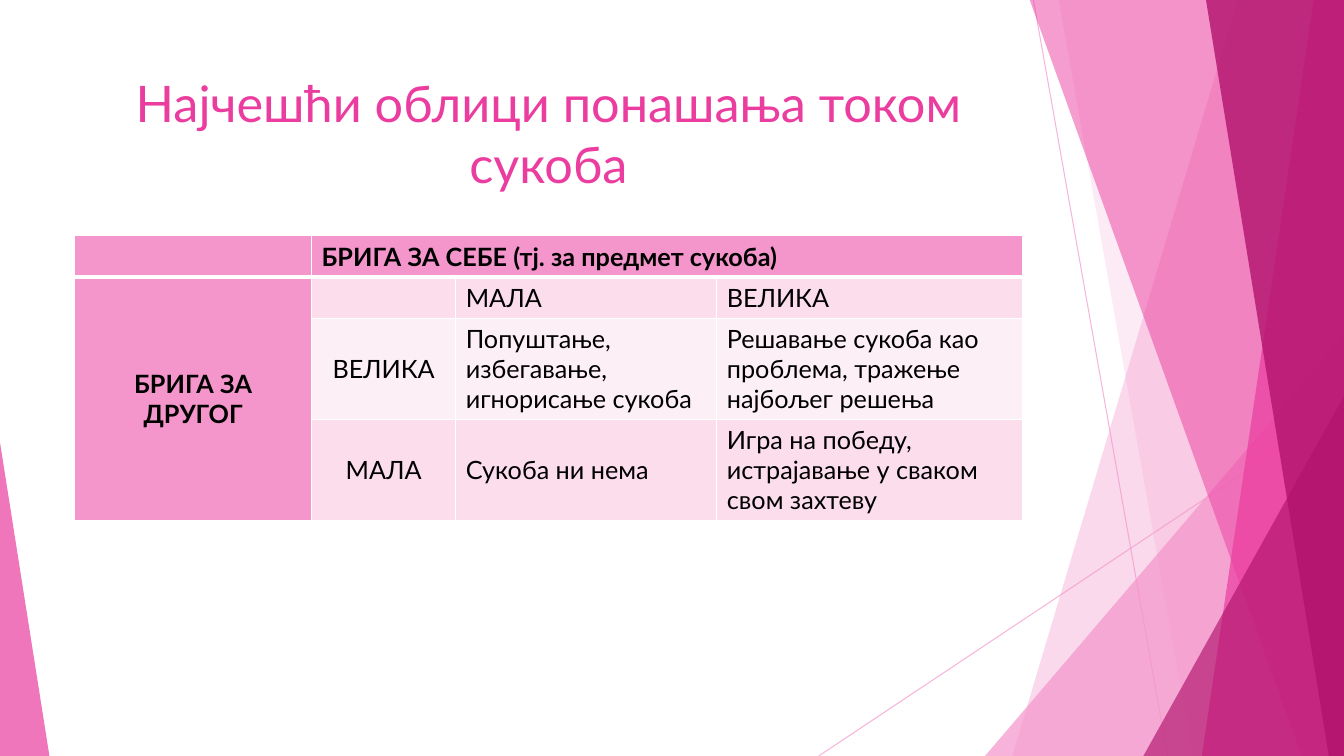
from lxml import etree
from pptx import Presentation
from pptx.dml.color import RGBColor
from pptx.enum.shapes import MSO_CONNECTOR, MSO_SHAPE
from pptx.enum.text import MSO_ANCHOR, PP_ALIGN
from pptx.oxml.ns import qn
from pptx.util import Inches, Pt

STRAIGHT = MSO_CONNECTOR.STRAIGHT
TRIANGLE = MSO_SHAPE.ISOSCELES_TRIANGLE
LEFT, CENTER = PP_ALIGN.LEFT, PP_ALIGN.CENTER
TOP, MIDDLE = MSO_ANCHOR.TOP, MSO_ANCHOR.MIDDLE

COLORS = {
    "light": "F496CB",
    "pink": "EB3D9F",
    "dark": "B2136D",
    "band": "FBDDEC",
    "pale": "FDEFF6",
    "black": "000000",
    "white": "FFFFFF",
}
RIGHT, BOTTOM = 13.33, 7.5


def rgb(name):
    return RGBColor.from_string(COLORS[name])


def write(tf, text, size=18, color="black", bold=False, align=LEFT, font="Lato"):
    p = tf.paragraphs[0]
    p.alignment = align
    r = p.add_run()
    r.text = text
    r.font.name = font
    r.font.size = Pt(size)
    r.font.bold = bold
    r.font.color.rgb = rgb(color)


def set_alpha(parent, percent):
    clr = next(parent.iter(qn("a:srgbClr")))
    etree.SubElement(clr, qn("a:alpha")).set("val", str(percent * 1000))


class SlideBuilder:
    def __init__(self, slide):
        self.s = slide

    def paint(self, sp, color, alpha):
        sp.shadow.inherit = False
        sp.line.fill.background()
        sp.fill.solid()
        sp.fill.fore_color.rgb = rgb(color)
        set_alpha(sp._element.spPr, alpha)

    def line(self, x1, y1, x2, y2, color="light", width=0.75, alpha=70):
        sp = self.s.shapes.add_connector(
            STRAIGHT, Inches(x1), Inches(y1), Inches(x2), Inches(y2))
        sp.line.color.rgb = rgb(color)
        sp.line.width = Pt(width)
        set_alpha(sp._element.spPr, alpha)
        etree.SubElement(sp._element.spPr, qn("a:effectLst"))

    def shard(self, top_x, bottom_x, color, alpha):
        top = -0.01
        corners = [(RIGHT, top), (RIGHT, BOTTOM), (bottom_x, BOTTOM)]
        fb = self.s.shapes.build_freeform(Inches(top_x), Inches(top))
        fb.add_line_segments([(Inches(x), Inches(y)) for x, y in corners])
        self.paint(fb.convert_to_shape(), color, alpha)

    def triangle(self, x, y, w, apex, color, alpha):
        sp = self.s.shapes.add_shape(
            TRIANGLE, Inches(x), Inches(y), Inches(w), Inches(BOTTOM - y))
        sp.adjustments[0] = apex
        self.paint(sp, color, alpha)

    def text(self, x, y, w, h, text, **fmt):
        tf = self.s.shapes.add_textbox(
            Inches(x), Inches(y), Inches(w), Inches(h)).text_frame
        tf.word_wrap = True
        tf.vertical_anchor = TOP
        write(tf, text, **fmt)

    def border(self, cell, bottom):
        tcPr = cell._tc.get_or_add_tcPr()
        widths = {"lnL": 1, "lnR": 1, "lnT": 1, "lnB": bottom}
        for i, (side, width) in enumerate(widths.items()):
            ln = etree.Element(qn(f"a:{side}"), w=str(Pt(width)))
            fill = etree.SubElement(ln, qn("a:solidFill"))
            etree.SubElement(fill, qn("a:srgbClr"), val=COLORS["white"])
            tcPr.insert(i, ln)

    def table(self, x, y, widths, heights, rows, fills, merges):
        t = self.s.shapes.add_table(
            len(heights), len(widths), Inches(x), Inches(y),
            Inches(sum(widths)), Inches(sum(heights))).table
        t.first_row = t.horz_banding = False
        for col, w in zip(t.columns, widths):
            col.width = Inches(w)
        for row, h in zip(t.rows, heights):
            row.height = Inches(h)
        for i, row in enumerate(rows):
            for j, text in enumerate(row):
                cell = t.cell(i, j)
                header = i == 0 or j == 0
                cell.fill.solid()
                cell.fill.fore_color.rgb = rgb("light" if header else fills[i])
                cell.vertical_anchor = MIDDLE
                self.border(cell, 3 if i == 0 else 1)
                if text:
                    write(cell.text_frame, text, bold=header,
                          align=CENTER if i and j < 2 else LEFT)
        for first, last in merges:
            t.cell(*first).merge(t.cell(*last))


def main():
    prs = Presentation()
    prs.slide_width, prs.slide_height = Inches(RIGHT), Inches(BOTTOM)
    b = SlideBuilder(prs.slides.add_slide(prs.slide_layouts[6]))

    b.line(10.25, 0, 11.58, BOTTOM)
    b.line(RIGHT, 4.03, 8.12, BOTTOM)
    b.shard(12.28, 10.04, "light", 36)
    b.shard(10.5, 11.83, "light", 20)
    b.triangle(9.77, 3.33, 3.56, 1, "light", 72)
    b.shard(10.21, 12.91, "pink", 50)
    b.shard(13.03, 11.92, "pink", 70)
    b.shard(11.96, 13.18, "dark", 80)
    b.triangle(11.34, 3.93, 1.99, 1, "dark", 66)
    b.triangle(0, 4.39, 0.49, 0, "pink", 70)

    b.text(0.74, 0.67, 9.4, 1.44, "Најчешћи облици понашања током сукоба",
           size=36, color="pink", align=CENTER)
    b.table(
        0.74, 2.34, [2.35, 1.43, 2.59, 3.03], [0.41, 0.41, 1, 1],
        rows=[
            ["", "БРИГА ЗА СЕБЕ (тј. за предмет сукоба)", "", ""],
            ["БРИГА ЗА ДРУГОГ", "", "МАЛА", "ВЕЛИКА"],
            ["", "ВЕЛИКА", "Попуштање, избегавање, игнорисање сукоба",
             "Решавање сукоба као проблема, тражење најбољег решења"],
            ["", "МАЛА", "Сукоба ни нема",
             "Игра на победу, истрајавање у сваком свом захтеву"],
        ],
        fills=["light", "band", "pale", "band"],
        merges=[((0, 1), (0, 3)), ((1, 0), (3, 0))])

    prs.save("out.pptx")


if __name__ == "__main__":
    main()
